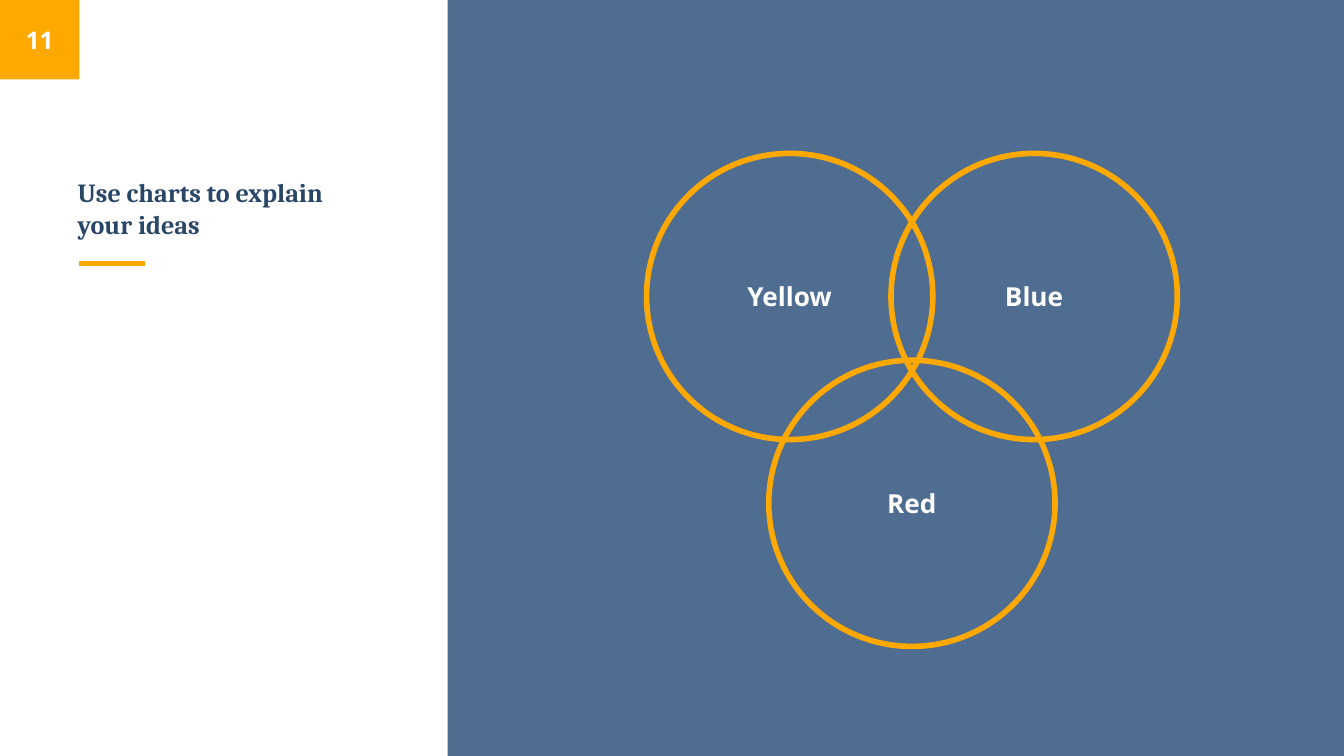
from dataclasses import dataclass

from lxml import etree
from pptx import Presentation
from pptx import util as u
from pptx.dml.color import RGBColor
from pptx.enum import shapes, text
from pptx.oxml.ns import qn


@dataclass(frozen=True)
class Theme:
    panel: RGBColor = RGBColor(0x32, 0x56, 0x80)
    accent: RGBColor = RGBColor(0xFF, 0xA8, 0x00)
    title: RGBColor = RGBColor(0x29, 0x46, 0x67)
    white: RGBColor = RGBColor(0xFF, 0xFF, 0xFF)
    heading_font: str = "Cambria"
    body_font: str = "Open Sans"
    body_size: u.Pt = u.Pt(14)
    number_size: u.Pt = u.Pt(13)


theme = Theme()


def add_shape(kind, left, top, width, height, fill=None, line=None):
    s = slide.shapes.add_shape(kind, u.Cm(left), u.Cm(top), u.Cm(width), u.Cm(height))
    s.shadow.inherit = False
    if fill is None:
        s.fill.background()
    else:
        s.fill.solid()
        s.fill.fore_color.rgb = fill
    if line is None:
        s.line.fill.background()
    else:
        s.line.color.rgb = line
        s.line.width = u.Pt(3)
    return s


def write(s, words, font, size, color, align, anchor):
    tf = s.text_frame
    tf.word_wrap = True
    tf.vertical_anchor = anchor
    tf.margin_left = tf.margin_right = tf.margin_top = tf.margin_bottom = u.Cm(0.25)
    p = tf.paragraphs[0]
    p.text = words
    p.alignment = align
    p.font.name, p.font.size, p.font.bold = font, size, True
    p.font.color.rgb = color


prs = Presentation()
prs.slide_width, prs.slide_height = u.Cm(25.4), u.Cm(14.29)
slide = prs.slides.add_slide(prs.slide_layouts[6])

# Translucent panel on the right two thirds
panel = add_shape(shapes.MSO_SHAPE.RECTANGLE, 8.46, 0, 16.94, 14.29, fill=theme.panel)
rgb = panel.fill._xPr.find(".//" + qn("a:srgbClr"))
etree.SubElement(rgb, qn("a:alpha")).set("val", "86000")

# Slide number badge
badge = add_shape(shapes.MSO_SHAPE.RECTANGLE, 0, 0, 1.5, 1.5, fill=theme.accent)
write(badge, "11", theme.body_font, theme.number_size, theme.white,
      text.PP_ALIGN.CENTER, text.MSO_ANCHOR.MIDDLE)

# Title and its underline
title = slide.shapes.add_textbox(u.Cm(1.22), u.Cm(2.9), u.Cm(5.97), u.Cm(1.88))
write(title, "Use charts to explain your ideas", theme.heading_font, theme.body_size,
      theme.title, text.PP_ALIGN.LEFT, text.MSO_ANCHOR.BOTTOM)
rule = slide.shapes.add_connector(shapes.MSO_CONNECTOR.STRAIGHT,
                                  u.Cm(1.49), u.Cm(4.98), u.Cm(2.74), u.Cm(4.98))
rule.line.color.rgb = theme.accent
rule.line.width = u.Pt(2.25)
etree.SubElement(rule.line._get_or_add_ln().getparent(), qn("a:effectLst"))

# Venn circles: two on top, one centred below
diameter, venn_left, venn_top = 5.41, 12.22, 2.9
step_x, step_y = 2.31, 3.91
for label, col, row in (("Yellow", 0, 0), ("Red", 1, 1), ("Blue", 2, 0)):
    circle = add_shape(shapes.MSO_SHAPE.OVAL, venn_left + col * step_x,
                       venn_top + row * step_y, diameter, diameter, line=theme.accent)
    write(circle, label, theme.body_font, theme.body_size, theme.white,
          text.PP_ALIGN.CENTER, text.MSO_ANCHOR.MIDDLE)

prs.save("out.pptx")
